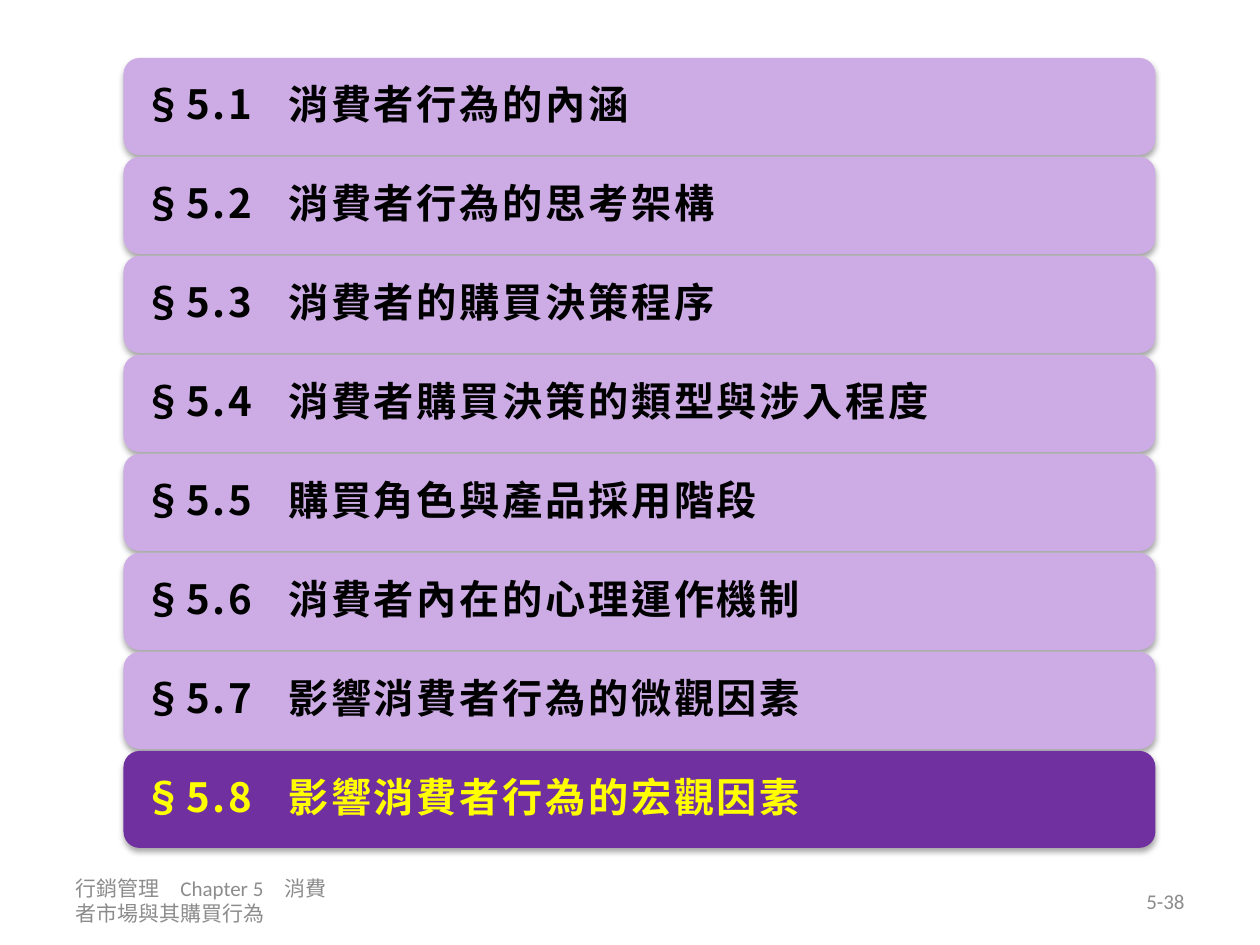
from lxml.etree import SubElement
from pptx import Presentation
from pptx.dml.color import RGBColor
from pptx.enum.lang import MSO_LANGUAGE_ID
from pptx.enum.shapes import MSO_SHAPE
from pptx.enum.text import MSO_ANCHOR, PP_ALIGN
from pptx.oxml.ns import qn
from pptx.util import Inches, Pt

COLORS = {"lilac": "CDACE6", "purple": "7030A0", "black": "000000", "yellow": "FFFF00", "gray": "8C8C8C"}
EAST_ASIAN_FONT = "Noto Sans CJK SC"
SECTIONS = [
    "消費者行為的內涵",
    "消費者行為的思考架構",
    "消費者的購買決策程序",
    "消費者購買決策的類型與涉入程度",
    "購買角色與產品採用階段",
    "消費者內在的心理運作機制",
    "影響消費者行為的微觀因素",
    "影響消費者行為的宏觀因素",
]
FOOTERS = [
    ("行銷管理　Chapter 5　消費者市場與其購買行為", 0.5, PP_ALIGN.LEFT),
    ("5-38", 7.17, PP_ALIGN.RIGHT),
]
BAR_TOP, BAR_PITCH = 0.46, 5.5 / 7


def add_text(paragraph, text, color, formats):
    run = paragraph.add_run()
    run.text = text
    for name, value in formats.items():
        setattr(run.font, name, value)
    run.font.color.rgb = RGBColor.from_string(COLORS[color])
    properties = run._r.get_or_add_rPr()
    SubElement(properties, qn("a:ea"), typeface=EAST_ASIAN_FONT)
    return properties


def add_shadow(shape):
    shape.shadow.inherit = False
    effects = shape._element.spPr.find(qn("a:effectLst"))
    shadow = SubElement(effects, qn("a:outerShdw"), blurRad=str(Pt(3.1)), dist=str(Pt(1.8)),
                        dir="5400000", rotWithShape="0")
    shadow_color = SubElement(shadow, qn("a:srgbClr"), val=COLORS["black"])
    SubElement(shadow_color, qn("a:alpha"), val="35000")


presentation = Presentation()
presentation.slide_width = Inches(10)
presentation.slide_height = Inches(7.5)
slide = presentation.slides.add_slide(presentation.slide_layouts[6])

footer_format = {"size": Pt(12), "name": "Calibri", "language_id": MSO_LANGUAGE_ID.TRADITIONAL_CHINESE}
for text, left, alignment in FOOTERS:
    footer = slide.shapes.add_textbox(Inches(left), Inches(6.95), Inches(2.33), Inches(0.4))
    footer.text_frame.word_wrap = True
    footer.text_frame.vertical_anchor = MSO_ANCHOR.MIDDLE
    paragraph = footer.text_frame.paragraphs[0]
    paragraph.alignment = alignment
    add_text(paragraph, text, "gray", footer_format)

section_format = {"size": Pt(23), "bold": True, "name": EAST_ASIAN_FONT,
                  "language_id": MSO_LANGUAGE_ID.TRADITIONAL_CHINESE}
frame_format = {"word_wrap": True, "vertical_anchor": MSO_ANCHOR.MIDDLE,
                "margin_left": Inches(0.12), "margin_right": Inches(0.12),
                "margin_top": Inches(0.1), "margin_bottom": Inches(0.1)}
paragraph_format = {"alignment": PP_ALIGN.LEFT, "line_spacing": 0.9, "space_after": Pt(8)}
for index, section in enumerate(SECTIONS):
    current = index == len(SECTIONS) - 1
    bar = slide.shapes.add_shape(MSO_SHAPE.ROUNDED_RECTANGLE, Inches(0.98),
                                 Inches(BAR_TOP + index * BAR_PITCH), Inches(8.19), Inches(0.77))
    bar.fill.solid()
    bar.fill.fore_color.rgb = RGBColor.from_string(COLORS["purple" if current else "lilac"])
    bar.line.fill.background()
    add_shadow(bar)
    for name, value in frame_format.items():
        setattr(bar.text_frame, name, value)
    paragraph = bar.text_frame.paragraphs[0]
    for name, value in paragraph_format.items():
        setattr(paragraph, name, value)
    tabs = SubElement(paragraph._p.get_or_add_pPr(), qn("a:tabLst"))
    SubElement(tabs, qn("a:tab"), pos=str(Inches(1.15)), algn="l")
    properties = add_text(paragraph, f"§5.{index + 1}\t{section}",
                          "yellow" if current else "black", section_format)
    properties.set("spc", "150")

presentation.save("out.pptx")
